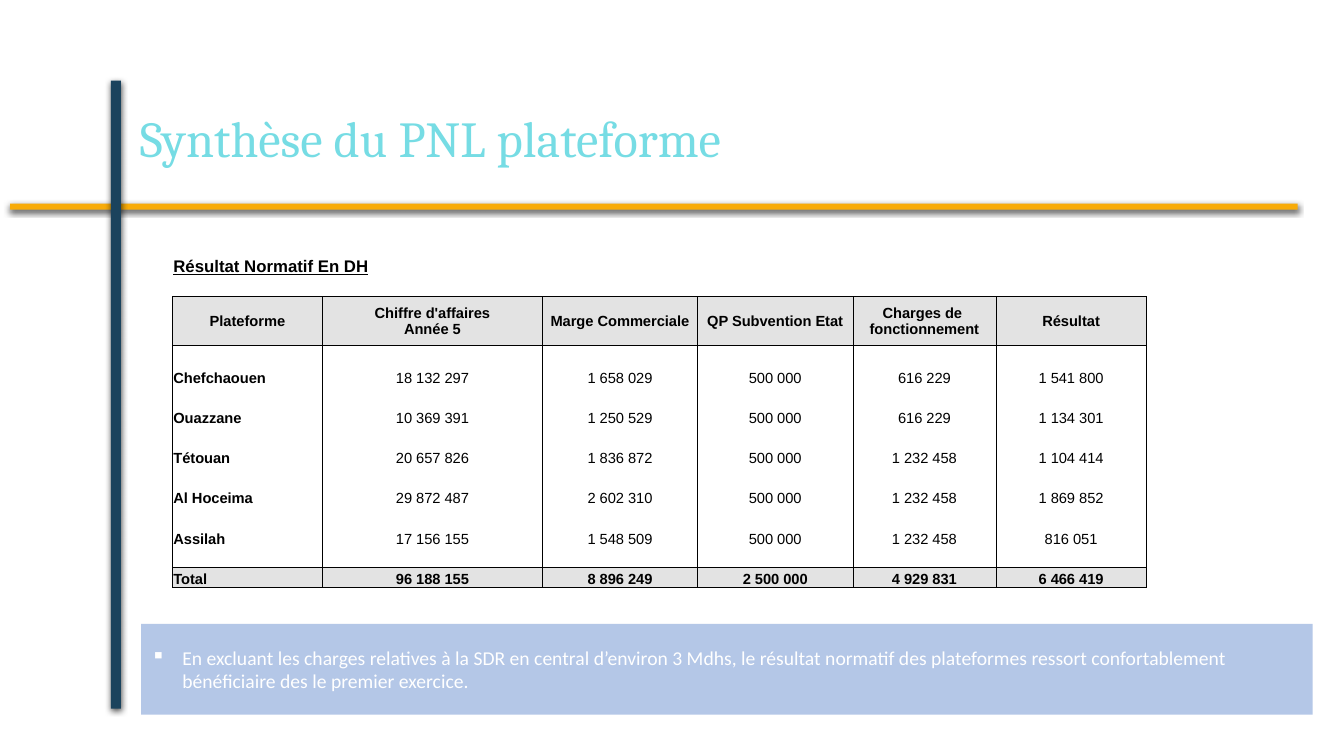
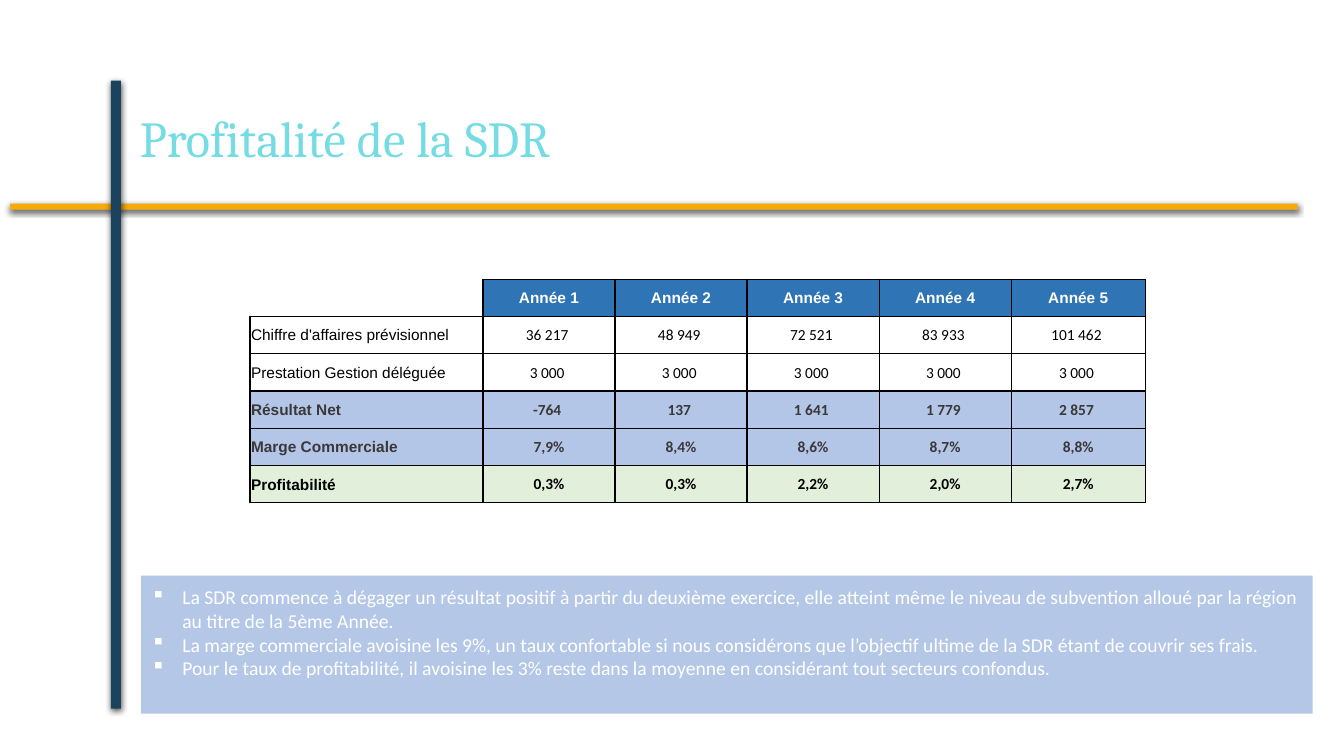
from lxml.etree import SubElement
from pptx import Presentation
from pptx.dml.color import RGBColor
from pptx.enum.shapes import MSO_SHAPE
from pptx.enum.text import MSO_ANCHOR, PP_ALIGN
from pptx.oxml.ns import qn
from pptx.util import Inches, Pt

ORANGE, NAVY, AQUA = "F8AB08", "1B435D", "76DCE4"
PALE_BLUE, BLUE, ROW_BLUE, GREEN, GREY = "B4C7E7", "2F75B5", "B4C6E7", "E2EFDA", "E3E3E3"
BLACK, CHARCOAL, WHITE = "000000", "3A3838", "FFFFFF"
NO_TABLE_STYLE = "{2D5ABB26-0587-4C30-8999-92F81FD0307C}"


def color(hex_code):
    return RGBColor.from_string(hex_code)


class Deck:
    """Hold the shared style and the slide being filled."""

    def __init__(self):
        self.prs = Presentation()
        self.prs.slide_width, self.prs.slide_height = Inches(13.33), Inches(7.5)
        self.slide = None

    def start(self, title):
        self.slide = self.prs.slides.add_slide(self.prs.slide_layouts[6])
        for band in ((0.1, 2.02, 12.77, 0.06, ORANGE), (1.1, 0.8, 0.1, 6.23, NAVY)):
            self.shadow(self.box(*band))
        frame = self.slide.shapes.add_textbox(*map(Inches, (1.29, 0.8, 11.5, 1.2))).text_frame
        frame.word_wrap = True
        frame.vertical_anchor = MSO_ANCHOR.MIDDLE
        frame.paragraphs[0].line_spacing = 0.9
        self.set_text(frame.paragraphs[0], title, AQUA, name="Cambria", size=Pt(36))

    def box(self, left, top, width, height, fill):
        shape = self.slide.shapes.add_shape(
            MSO_SHAPE.RECTANGLE, *map(Inches, (left, top, width, height)))
        shape.shadow.inherit = False
        shape.fill.solid()
        shape.fill.fore_color.rgb = color(fill)
        shape.line.fill.background()
        return shape

    def shadow(self, shape):
        effects = shape._element.spPr.find(qn("a:effectLst"))
        outer = SubElement(effects, qn("a:outerShdw"), blurRad=str(Pt(4.5)),
                           dist=str(Pt(1.5)), dir="5400000", rotWithShape="0")
        tint = SubElement(outer, qn("a:srgbClr"), val=BLACK)
        SubElement(tint, qn("a:alpha"), val="63000")

    def set_text(self, paragraph, text, ink, **formats):
        paragraph.text = text
        points = str(int(formats["size"].pt * 100))
        for line_break in paragraph._p.findall(qn("a:br")):
            SubElement(line_break, qn("a:rPr"), sz=points)
        if not text:
            SubElement(paragraph._p, qn("a:endParaRPr"), sz=points)
        for run in paragraph.runs:
            run.font.color.rgb = color(ink)
            for name, value in formats.items():
                setattr(run.font, name, value)

    def callout(self, top, height, points, bottom_inset=0.05):
        frame = self.box(1.4, top, 11.62, height, PALE_BLUE).text_frame
        frame.word_wrap = True
        frame.vertical_anchor = MSO_ANCHOR.MIDDLE
        frame.margin_bottom = Inches(bottom_inset)
        for index, point in enumerate(points):
            paragraph = frame.add_paragraph() if index else frame.paragraphs[0]
            paragraph.alignment = PP_ALIGN.LEFT
            properties = paragraph._p.get_or_add_pPr()
            properties.set("marL", str(Inches(0.31)))
            properties.set("indent", str(-Inches(0.31)))
            SubElement(properties, qn("a:buChar"), char="▪")
            self.set_text(paragraph, point, WHITE, name="Calibri", size=Pt(14))

    def table(self, left, top, widths, heights, rows):
        grid = self.slide.shapes.add_table(
            len(rows), len(widths), *map(Inches, (left, top, sum(widths), sum(heights)))).table
        grid.first_row = grid.horz_banding = False
        grid._tbl.tblPr.find(qn("a:tableStyleId")).text = NO_TABLE_STYLE
        for column, width in zip(grid.columns, widths):
            column.width = Inches(width)
        for row, height, (label, values, label_style, value_style) in zip(grid.rows, heights, rows):
            row.height = Inches(height)
            texts = [label, *(values or [""] * (len(widths) - 1))]
            for index, (cell, text) in enumerate(zip(row.cells, texts)):
                self.cell(cell, text, **(value_style if index else label_style))
        return grid

    def cell(self, cell, text, edges=None, fill=None, ink=BLACK, align=PP_ALIGN.CENTER,
             anchor=MSO_ANCHOR.MIDDLE, **formats):
        insets = {"margin_left": 0.01, "margin_right": 0.01, "margin_top": 0.01, "margin_bottom": 0}
        for name, value in insets.items():
            setattr(cell, name, Inches(value))
        cell.vertical_anchor = anchor
        properties = cell._tc.get_or_add_tcPr()
        for side, width in (edges or {}).items():
            edge = SubElement(properties, qn(f"a:ln{side}"), w=str(Pt(width)))
            SubElement(SubElement(edge, qn("a:solidFill")), qn("a:srgbClr"), val=BLACK)
        if fill:
            cell.fill.solid()
            cell.fill.fore_color.rgb = color(fill)
        else:
            cell.fill.background()
        paragraph = cell.text_frame.paragraphs[0]
        paragraph.alignment = align
        self.set_text(paragraph, text, ink, **formats)


def platform_slide(deck):
    deck.start("Synthèse du PNL plateforme")
    plain = {"name": "Arial", "size": Pt(10.5), "anchor": MSO_ANCHOR.BOTTOM}
    left_bold = {"bold": True, "align": PP_ALIGN.LEFT}
    caption = {**plain, **left_bold, "size": Pt(12), "underline": True}
    value = {**plain, "edges": dict.fromkeys("LR", 0.5)}
    label = {**value, **left_bold}
    total = {**plain, "bold": True, "fill": GREY, "edges": dict.fromkeys("LRTB", 0.5)}
    header = {**total, "anchor": MSO_ANCHOR.MIDDLE}
    spacer = ("", None, value, value)
    rows = [
        ("Résultat Normatif En DH", None, caption, plain),
        ("", None, plain, plain),
        ("Plateforme", ["Chiffre d'affaires\nAnnée 5", "Marge Commerciale", "QP Subvention Etat",
                        "Charges de \nfonctionnement", "Résultat"], header, header),
        spacer,
    ]
    platforms = {
        "Chefchaouen": ["18 132 297", "1 658 029", "500 000", "616 229", "1 541 800"],
        "Ouazzane": ["10 369 391", "1 250 529", "500 000", "616 229", "1 134 301"],
        "Tétouan": ["20 657 826", "1 836 872", "500 000", "1 232 458", "1 104 414"],
        "Al Hoceima": ["29 872 487", "2 602 310", "500 000", "1 232 458", "1 869 852"],
        "Assilah": ["17 156 155", "1 548 509", "500 000", "1 232 458", "816 051"],
    }
    for platform, figures in platforms.items():
        rows += [(platform, figures, label, value), spacer]
    rows.append(("Total", ["96 188 155", "8 896 249", "2 500 000", "4 929 831", "6 466 419"],
                 {**total, **left_bold}, total))
    heights = [0.21, 0.2, 0.49] + [0.2] * (len(rows) - 3)
    results = deck.table(1.71, 2.53, [1.49, 2.18, 1.54, 1.54, 1.42, 1.49], heights, rows)
    results.cell(0, 0).merge(results.cell(0, 1))
    deck.callout(6.19, 0.9, [
        "En excluant les charges relatives à la SDR en central d’environ 3 Mdhs, le résultat "
        "normatif des plateformes ressort confortablement bénéficiaire des le premier exercice."])


def profitability_slide(deck):
    deck.start("Profitalité de la SDR")
    frame = dict.fromkeys("LRTB", 1)
    base = {"size": Pt(11), "name": "Arial"}
    header = {**base, "edges": frame, "fill": BLUE, "ink": WHITE, "bold": True}
    result = {"fill": ROW_BLUE, "ink": CHARCOAL, "bold": True}
    lines = [
        ("Chiffre d'affaires prévisionnel", ["36 217 ", "48 949 ", "72 521 ", "83 933 ", "101 462 "],
         {"edges": {**frame, "B": 0.5}}),
        ("Prestation Gestion déléguée", ["3 000 "] * 5, {"edges": {**frame, "T": 0.5}}),
        ("Résultat Net", ["-764 ", "137 ", "1 641 ", "1 779 ", "2 857 "], result),
        ("Marge Commerciale", ["7,9%", "8,4%", "8,6%", "8,7%", "8,8%"], result),
        ("Profitabilité", ["0,3%", "0,3%", "2,2%", "2,0%", "2,7%"], {"fill": GREEN, "bold": True}),
    ]
    rows = [("", [f"Année {year}" for year in range(1, 6)], base, header)]
    for label, figures, look in lines:
        style = {**base, "edges": frame, **look}
        rows.append((label, figures, {**style, "align": PP_ALIGN.LEFT}, {**style, "name": "Calibri"}))
    deck.table(2.48, 2.77, [2.31] + [1.31] * 4 + [1.33], [0.37] * len(rows), rows)
    deck.callout(5.71, 1.37, [
        "La SDR commence à dégager un résultat positif à partir du deuxième exercice, elle atteint "
        "même le niveau de subvention alloué par la région au titre de la 5ème Année.",
        "La marge commerciale avoisine les 9%, un taux confortable si nous considérons que "
        "l’objectif ultime de la SDR étant de couvrir ses frais.",
        "Pour le taux de profitabilité, il avoisine les 3% reste dans la moyenne en considérant "
        "tout secteurs confondus."], bottom_inset=0.29)


def main():
    deck = Deck()
    platform_slide(deck)
    profitability_slide(deck)
    deck.prs.save("out.pptx")


if __name__ == "__main__":
    main()
